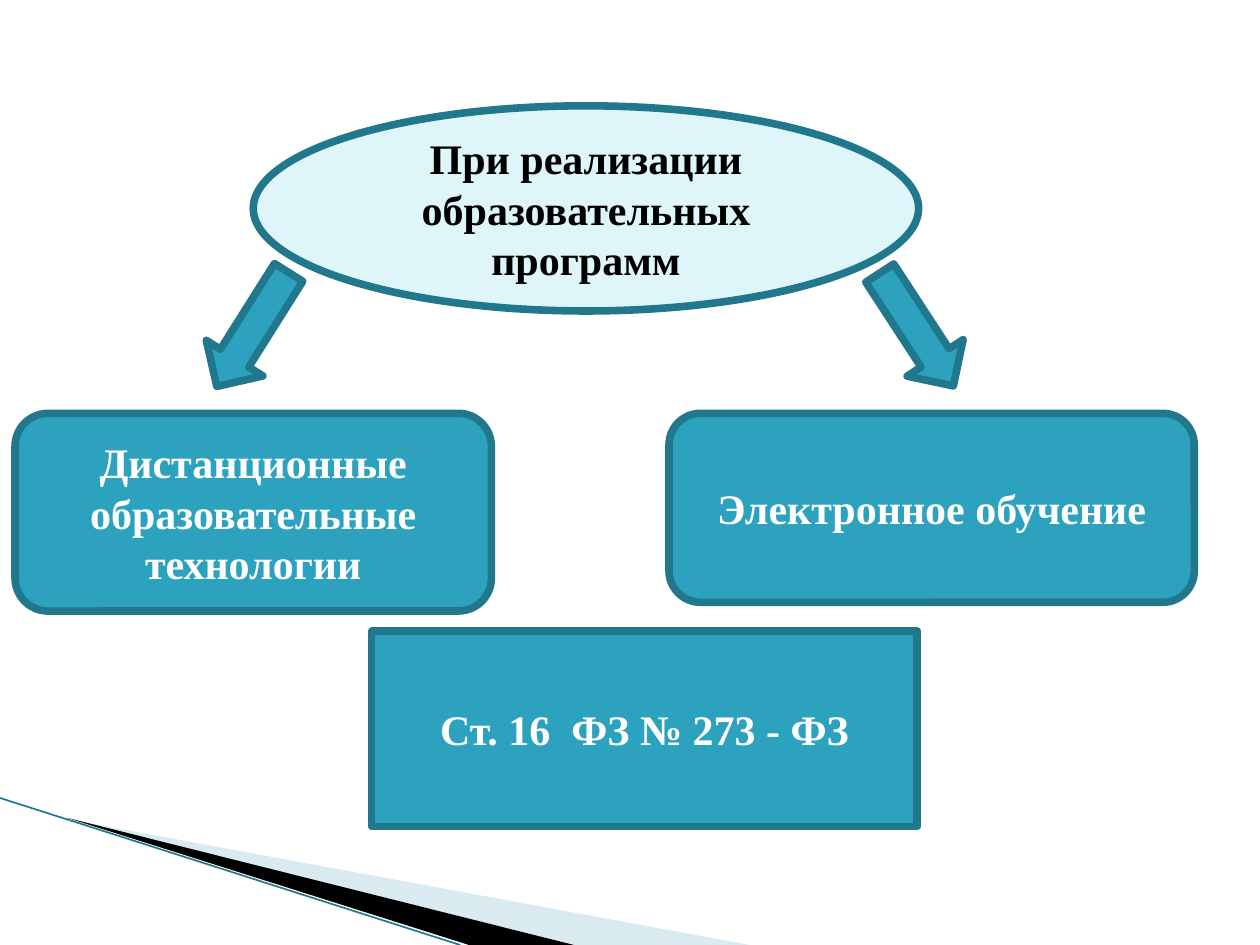
from lxml import etree
from pptx import Presentation
from pptx.dml.color import RGBColor
from pptx.enum.shapes import MSO_CONNECTOR, MSO_SHAPE
from pptx.enum.text import MSO_ANCHOR, PP_ALIGN
from pptx.oxml.ns import qn
from pptx.util import Pt

OVAL = MSO_SHAPE.OVAL
ROUNDED = MSO_SHAPE.ROUNDED_RECTANGLE
RECTANGLE = MSO_SHAPE.RECTANGLE
DOWN_ARROW = MSO_SHAPE.DOWN_ARROW
STRAIGHT = MSO_CONNECTOR.STRAIGHT
MIDDLE = MSO_ANCHOR.MIDDLE
CENTER = PP_ALIGN.CENTER

COLORS = {
    "teal": "2DA2BF",
    "outline": "21788D",
    "pale": "DEF5FA",
    "wedge": "A0CBDC",
    "black": "000000",
    "white": "FFFFFF",
}
SLIDE_SIZE = (720, 540)
OUTLINE_WIDTH = 4.33
FONT = {"name": "Times New Roman", "size": Pt(24), "bold": True}

WEDGES = [
    ([(39.6, 468.3), (428.4, 540), (328, 540)], "wedge", 40),
    ([(38.2, 467.3), (328, 540), (268, 540)], "black", 100),
]
EDGE_LINE = ((0, 456), (263, 540))

BOXES = [
    (OVAL, (144.7, 60.5, 380.2, 117.2), "pale", "black",
     "При реализации образовательных программ"),
    (ROUNDED, (8.6, 236.2, 272.2, 113), "teal", "white",
     "Дистанционные образовательные технологии"),
    (ROUNDED, (382.3, 236.2, 300.2, 108), "teal", "white",
     "Электронное обучение"),
    (RECTANGLE, (212.4, 360.7, 311.8, 111.6), "teal", "white",
     "Ст. 16  ФЗ № 273 - ФЗ"),
]
ARROW_TOP, ARROW_WIDTH, ARROW_HEIGHT = 149.8, 38.2, 77
ARROWS = [(504.7, 326.9), (125.3, 32.2)]


def color(name):
    return RGBColor.from_string(COLORS[name])


def fill_shape(shape, name):
    shape.shadow.inherit = False
    shape.fill.solid()
    shape.fill.fore_color.rgb = color(name)


def add_outlined(slide, kind, bounds, fill):
    shape = slide.shapes.add_shape(kind, *map(Pt, bounds))
    fill_shape(shape, fill)
    shape.line.color.rgb = color("outline")
    shape.line.width = Pt(OUTLINE_WIDTH)
    outline = shape._element.spPr.find(qn("a:ln"))
    etree.SubElement(outline, qn("a:round"))
    return shape


def add_wedge(slide, points, fill, opacity):
    start, *others = [(Pt(x), Pt(y)) for x, y in points]
    builder = slide.shapes.build_freeform(*start)
    builder.add_line_segments(others, close=True)
    shape = builder.convert_to_shape()
    fill_shape(shape, fill)
    shape.line.fill.background()
    if opacity < 100:
        fill_color = shape._element.spPr.find(".//" + qn("a:srgbClr"))
        etree.SubElement(fill_color, qn("a:alpha"), val=str(opacity * 1000))


def add_edge_line(slide, start, end):
    connector = slide.shapes.add_connector(
        STRAIGHT, *map(Pt, start), *map(Pt, end))
    connector.line.color.rgb = color("outline")
    connector.line.width = Pt(0.95)
    etree.SubElement(connector._element.spPr, qn("a:effectLst"))


def add_box(slide, kind, bounds, fill, text_color, text):
    frame = add_outlined(slide, kind, bounds, fill).text_frame
    frame.word_wrap = True
    frame.vertical_anchor = MIDDLE
    paragraph = frame.paragraphs[0]
    paragraph.alignment = CENTER
    run = paragraph.add_run()
    run.text = text
    for attribute, value in FONT.items():
        setattr(run.font, attribute, value)
    run.font.color.rgb = color(text_color)


def main():
    presentation = Presentation()
    presentation.slide_width, presentation.slide_height = map(Pt, SLIDE_SIZE)
    slide = presentation.slides.add_slide(presentation.slide_layouts[6])
    for wedge in WEDGES:
        add_wedge(slide, *wedge)
    add_edge_line(slide, *EDGE_LINE)
    for box in BOXES:
        add_box(slide, *box)
    for left, rotation in ARROWS:
        bounds = (left, ARROW_TOP, ARROW_WIDTH, ARROW_HEIGHT)
        add_outlined(slide, DOWN_ARROW, bounds, "teal").rotation = rotation
    presentation.save("out.pptx")


if __name__ == "__main__":
    main()
